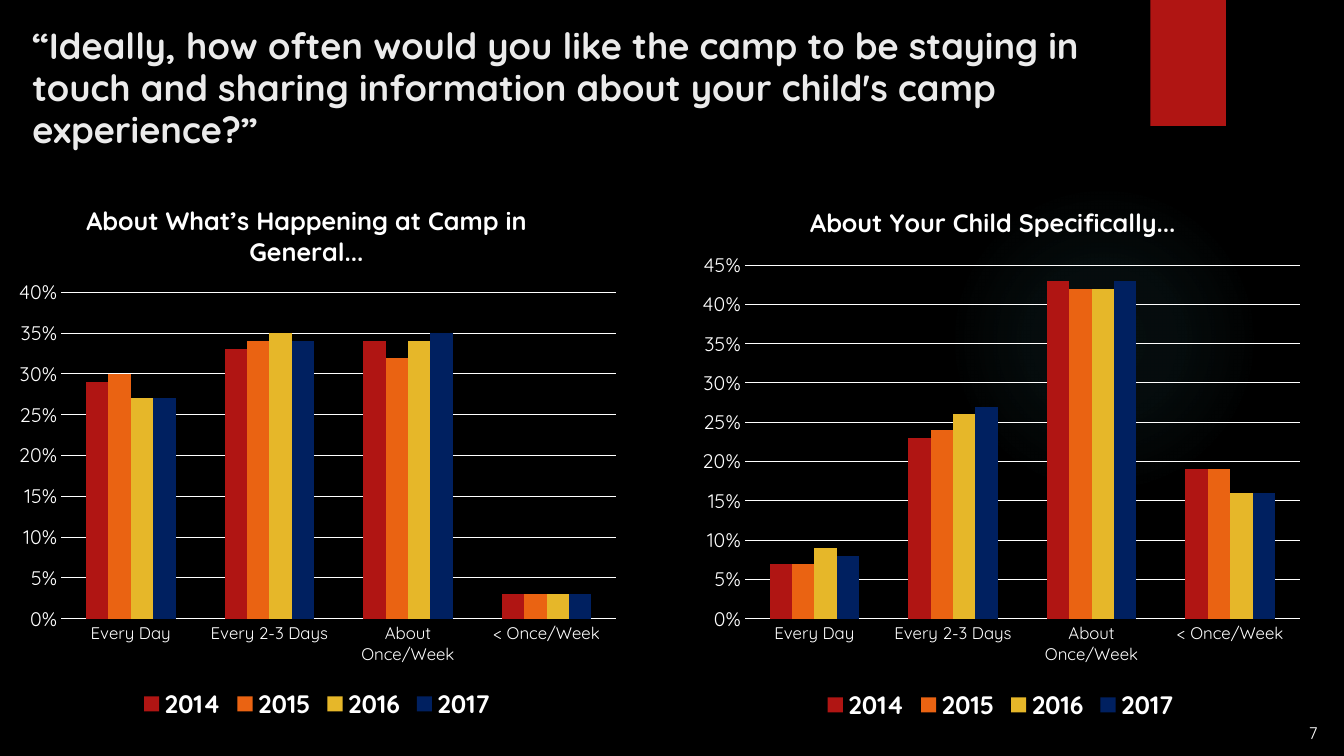
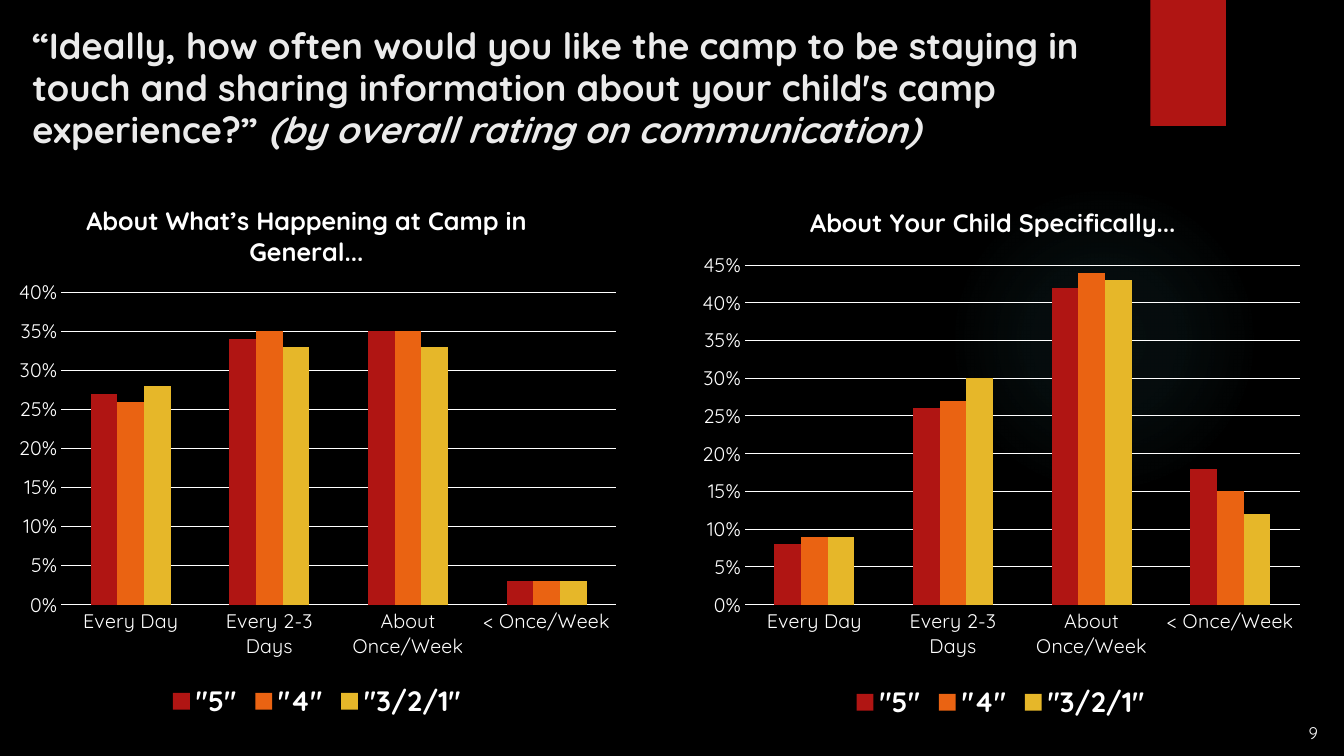
from dataclasses import dataclass

from pptx import Presentation
from pptx.chart.chart import Chart
from pptx.chart.data import CategoryChartData
from pptx.dml.color import RGBColor
from pptx.enum.chart import XL_CHART_TYPE, XL_LEGEND_POSITION, XL_TICK_MARK
from pptx.enum.shapes import MSO_SHAPE
from pptx.enum.text import MSO_ANCHOR, MSO_AUTO_SIZE, PP_ALIGN
from pptx.oxml import parse_xml
from pptx.oxml.ns import nsdecls, qn
from pptx.presentation import Presentation as Deck
from pptx.slide import Slide
from pptx.util import Emu, Pt

EMU_PER_PX = 9144


def px(length: int) -> Emu:
    return Emu(length * EMU_PER_PX)


def rgb(value: str) -> RGBColor:
    return RGBColor.from_string(value)


@dataclass(frozen=True)
class Theme:
    font: str = "Quicksand"
    background: str = "000000"
    accent: str = "B01513"
    glow: str = "50B9C1"
    title: str = "EBEBEB"
    ink: str = "FFFFFF"
    series: tuple[str, ...] = ("B01513", "EA6312", "E6B729", "002060")
    title_size: int = 26
    chart_title_size: int = 18
    value_size: int = 14
    page_size: int = 12
    base_size: int = 10
    rule_width: float = 0.75


@dataclass(frozen=True)
class Box:
    left: int
    top: int
    width: int
    height: int

    def emu(self) -> tuple[Emu, Emu, Emu, Emu]:
        return px(self.left), px(self.top), px(self.width), px(self.height)


@dataclass(frozen=True)
class Panel:
    heading: str
    box: Box
    heading_left: int
    heading_top: int
    plot_top: int
    maximum: float


@dataclass(frozen=True)
class Survey:
    page: str
    aside: str
    category_size: int
    legend_size: int
    plot_bottom: int
    groups: tuple[str, ...]
    answers: tuple[tuple[tuple[float, ...], ...], ...]


THEME = Theme()
QUESTION = (
    "“Ideally, how often would you like the camp to be staying in touch "
    "and sharing information about your child's camp experience?”"
)
FREQUENCIES = ("Every Day", "Every 2-3 Days", "About Once/Week", "< Once/Week")
PLOT_LEFT, PLOT_WIDTH = 55, 550
TITLE_BOX = Box(22, 21, 1116, 153)
PAGE_BOX = Box(1272, 705, 61, 37)
GLOW_BOX = Box(941, 183, 308, 308)
RIBBON_BOX = Box(1141, 0, 75, 125)

PANELS = (
    Panel("About What’s Happening at Camp in General...",
          Box(6, 176, 617, 543), 75, 20, 114, 0.40),
    Panel("About Your Child Specifically...",
          Box(684, 176, 617, 544), 115, 22, 87, 0.45),
)
SURVEYS = (
    Survey(
        "7", "", 12, 18, 438, ("2014", "2015", "2016", "2017"),
        (
            ((0.29, 0.33, 0.34, 0.03), (0.30, 0.34, 0.32, 0.03),
             (0.27, 0.35, 0.34, 0.03), (0.27, 0.34, 0.35, 0.03)),
            ((0.07, 0.23, 0.43, 0.19), (0.07, 0.24, 0.42, 0.19),
             (0.09, 0.26, 0.42, 0.16), (0.08, 0.27, 0.43, 0.16)),
        ),
    ),
    Survey(
        "9", "(by overall rating on communication)", 14, 20, 424,
        ('"5"', '"4"', '"3/2/1"'),
        (
            ((0.27, 0.34, 0.35, 0.03), (0.26, 0.35, 0.35, 0.03),
             (0.28, 0.33, 0.33, 0.03)),
            ((0.08, 0.26, 0.42, 0.18), (0.09, 0.27, 0.44, 0.15),
             (0.09, 0.30, 0.43, 0.12)),
        ),
    ),
)


def style_font(font, size: int, color: str = THEME.ink, bold: bool = False) -> None:
    font.name = THEME.font
    font.size = Pt(size)
    font.bold = bold
    font.color.rgb = rgb(color)


def manual_layout(inner: bool, **fractions: float):
    target = '<c:layoutTarget val="inner"/>' if inner else ""
    modes = '<c:xMode val="edge"/><c:yMode val="edge"/>'
    values = "".join(f'<c:{key} val="{value:.4f}"/>' for key, value in fractions.items())
    return parse_xml(
        f'<c:layout {nsdecls("c")}><c:manualLayout>{target}{modes}{values}'
        "</c:manualLayout></c:layout>"
    )


def place(element, layout, index: int) -> None:
    for old in element.findall(qn("c:layout")):
        element.remove(old)
    element.insert(index, layout)


def decorate_master(deck: Deck, slide: Slide) -> None:
    master = deck.slide_master
    master.background.fill.solid()
    master.background.fill.fore_color.rgb = rgb(THEME.background)

    glow = slide.shapes.add_shape(MSO_SHAPE.OVAL, *GLOW_BOX.emu())
    ribbon = slide.shapes.add_shape(MSO_SHAPE.RECTANGLE, *RIBBON_BOX.emu())
    for decoration in (glow, ribbon):
        decoration.shadow.inherit = False
        decoration.line.fill.background()
    ribbon.fill.solid()
    ribbon.fill.fore_color.rgb = rgb(THEME.accent)

    stops = "".join(
        f'<a:gs pos="{position * 1000}"><a:srgbClr val="{THEME.glow}">'
        f'<a:alpha val="{alpha * 1000}"/></a:srgbClr></a:gs>'
        for position, alpha in ((0, 7), (36, 6), (69, 0), (100, 0))
    )
    gradient = parse_xml(
        f'<a:gradFill {nsdecls("a")}><a:gsLst>{stops}</a:gsLst><a:path path="circle">'
        '<a:fillToRect l="50000" t="50000" r="50000" b="50000"/></a:path></a:gradFill>'
    )
    glow.element.spPr.find(qn("a:prstGeom")).addnext(gradient)

    tree = master.element.cSld.spTree
    for index, decoration in enumerate((glow, ribbon), start=2):
        tree.insert(index, decoration.element)


def write_title(slide: Slide, aside: str) -> None:
    title = slide.shapes.title
    title.left, title.top, title.width, title.height = TITLE_BOX.emu()
    frame = title.text_frame
    frame.text = f"{QUESTION} " if aside else QUESTION
    frame.word_wrap = True
    frame.auto_size = MSO_AUTO_SIZE.NONE
    frame.vertical_anchor = MSO_ANCHOR.TOP
    paragraph = frame.paragraphs[0]
    paragraph.alignment = PP_ALIGN.LEFT
    paragraph.line_spacing = 0.96
    if aside:
        note = paragraph.add_run()
        note.text = aside
        note.font.italic = True
    for run in paragraph.runs:
        style_font(run.font, THEME.title_size, THEME.title, bold=True)


def style_axes(chart: Chart, panel: Panel, survey: Survey) -> None:
    frequency, share = chart.category_axis, chart.value_axis
    for axis, size in ((frequency, survey.category_size), (share, THEME.value_size)):
        axis.major_tick_mark = axis.minor_tick_mark = XL_TICK_MARK.NONE
        style_font(axis.tick_labels.font, size)
    share.minimum_scale = 0
    share.maximum_scale = panel.maximum
    share.major_unit = 0.05
    share.has_major_gridlines = True
    share.tick_labels.number_format = "0%"
    share.tick_labels.number_format_is_linked = False
    share.format.line.fill.background()
    for line in (frequency.format.line, share.major_gridlines.format.line):
        line.color.rgb = rgb(THEME.ink)
        line.width = Pt(THEME.rule_width)


def draw_chart(slide: Slide, panel: Panel, survey: Survey,
               answers: tuple[tuple[float, ...], ...]) -> None:
    data = CategoryChartData(number_format="0%")
    data.categories = FREQUENCIES
    for group, shares in zip(survey.groups, answers):
        data.add_series(group, shares)
    chart = slide.shapes.add_chart(
        XL_CHART_TYPE.COLUMN_CLUSTERED, *panel.box.emu(), data
    ).chart
    style_font(chart.font, THEME.base_size)

    heading = chart.chart_title
    heading.text_frame.text = panel.heading
    style_font(heading.text_frame.paragraphs[0].runs[0].font,
               THEME.chart_title_size, bold=True)
    heading.include_in_layout = False
    width, height = panel.box.width, panel.box.height
    place(heading.element, manual_layout(
        False, x=panel.heading_left / width, y=panel.heading_top / height), 1)
    place(chart.element.chart.plotArea, manual_layout(
        True, x=PLOT_LEFT / width, y=panel.plot_top / height, w=PLOT_WIDTH / width,
        h=(survey.plot_bottom - panel.plot_top) / height), 0)

    chart.has_legend = True
    chart.legend.position = XL_LEGEND_POSITION.BOTTOM
    chart.legend.include_in_layout = False
    style_font(chart.legend.font, survey.legend_size, bold=True)

    style_axes(chart, panel, survey)
    columns = chart.plots[0]
    columns.gap_width = 219
    columns.overlap = 0
    columns.vary_by_categories = False
    for series, color in zip(columns.series, THEME.series):
        series.format.fill.solid()
        series.format.fill.fore_color.rgb = rgb(color)


def write_page(slide: Slide, page: str) -> None:
    frame = slide.shapes.add_textbox(*PAGE_BOX.emu()).text_frame
    frame.text = page
    frame.word_wrap = True
    frame.vertical_anchor = MSO_ANCHOR.BOTTOM
    paragraph = frame.paragraphs[0]
    paragraph.alignment = PP_ALIGN.CENTER
    style_font(paragraph.runs[0].font, THEME.page_size)


def build_slide(deck: Deck, survey: Survey) -> Slide:
    slide = deck.slides.add_slide(deck.slide_layouts.get_by_name("Title Only"))
    write_title(slide, survey.aside)
    for panel, answers in zip(PANELS, survey.answers):
        draw_chart(slide, panel, survey, answers)
    write_page(slide, survey.page)
    return slide


def main() -> None:
    deck = Presentation()
    deck.slide_width, deck.slide_height = px(1333), px(750)
    slides = [build_slide(deck, survey) for survey in SURVEYS]
    decorate_master(deck, slides[0])
    deck.save("out.pptx")


if __name__ == "__main__":
    main()
